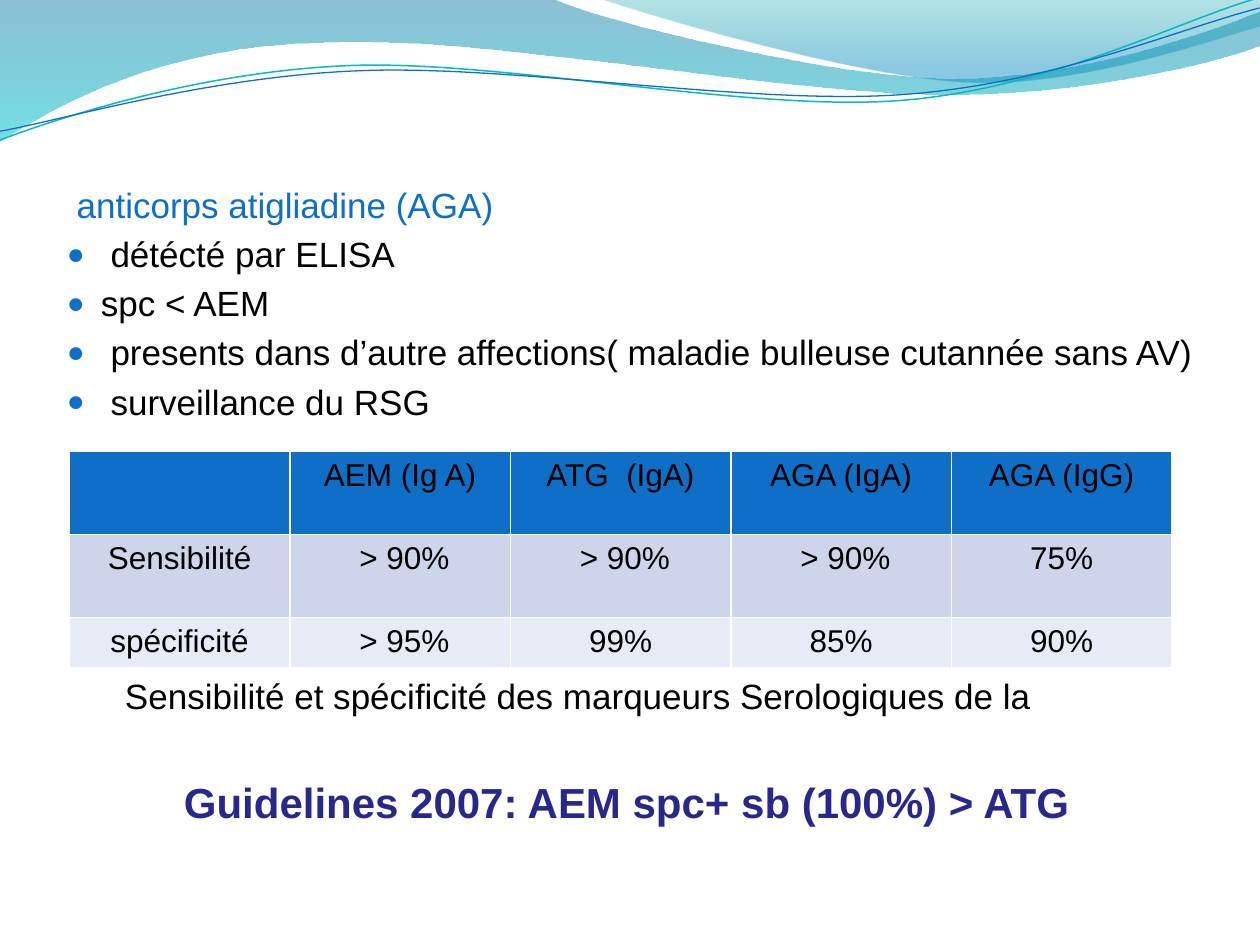
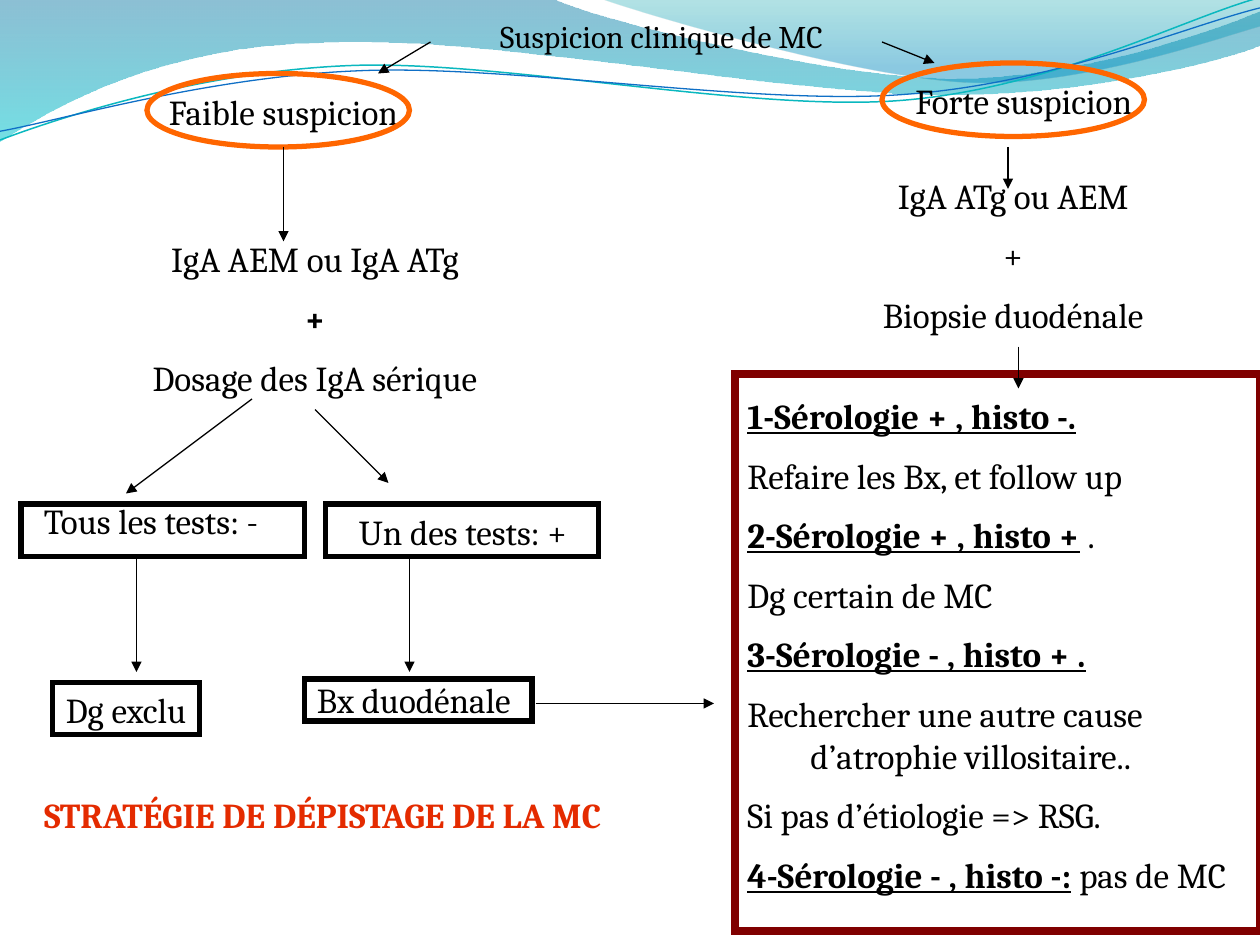
from dataclasses import dataclass
from lxml.etree import SubElement
from pptx import Presentation
from pptx.dml.color import RGBColor as RGB
from pptx.enum.shapes import MSO_CONNECTOR as LINE, MSO_SHAPE as SHAPE
from pptx.enum.text import MSO_ANCHOR as ANCHOR, MSO_AUTO_SIZE as AUTO, PP_ALIGN as ALIGN
from pptx.oxml.ns import qn
from pptx.util import Pt


@dataclass(frozen=True)
class Theme:
    blue: str = "0F6FC6"
    teal: str = "0AB8BF"
    black: str = "000000"
    white: str = "FFFFFF"
    navy: str = "28288C"
    red: str = "E42B00"
    orange: str = "FF6600"
    maroon: str = "800000"
    row_fills: tuple = ("0F6FC6", "CCD5EA", "E7EBF5")
    sans: str = "Arial"
    serif: str = "Cambria"
    small: int = 18
    text: int = 20
    large: int = 24


T = Theme()

# Shared waves: start point, then line ends (2 numbers) or Bézier curves (6)
BANDS = [
    ((0, 0), [(317, 0), (343, 12, 478, 45, 546, 45), (614, 45, 690, 19, 720, 6.5),
              (720, 26), (708, 32, 626, 55, 537, 54), (446, 54, 275, 20, 185, 24.5),
              (93, 26, 33, 60, 0, 81)],
     [(0, "0074A1", 45), (1, "00C6CF", 55)]),
    ((345, 0), [(367, 8, 491, 44.5, 553.5, 47), (616.5, 49.5, 692, 23, 720, 15), (720, 0)],
     [(0, "00A1A9", 30), (0.8, "008BBF", 45)]),
]
STRANDS = [
    ((0, 80), [(34.5, 67, 114, 41, 199.5, 37.5), (284.5, 34, 427, 64, 513.5, 57.5),
               (600, 51, 675.5, 11, 718.5, -1)], T.teal, 0.85),
    ((0, 75), [(34, 69, 118, 44, 204, 40.5), (290, 36.5, 430, 60.5, 516, 54),
               (602, 48, 677.5, 15, 720, 4.5)], T.blue, 0.75),
]

# Slide 1 content
AGA_HEADING = " anticorps atigliadine (AGA)"
AGA_POINTS = [" détécté par ELISA", "spc < AEM",
              " presents dans d’autre affections( maladie bulleuse cutannée sans AV)",
              " surveillance du RSG"]
MARKERS = [
    ["", "AEM (Ig A)", "ATG  (IgA)", "AGA (IgA)", "AGA (IgG)"],
    ["Sensibilité", " > 90%", " > 90%", " > 90%", "75%"],
    ["spécificité", " > 95%", "99%", "85%", "90%"],
]
CAPTION = "Sensibilité et spécificité des marqueurs Serologiques de la"
GUIDELINE = "Guidelines 2007: AEM spc+ sb (100%) > ATG"

# Slide 2 content: a paragraph is a string or a list of (text, style) runs
STRATEGY_TITLE = "STRATÉGIE DE DÉPISTAGE DE LA MC"
KEY = dict(bold=True, underline=True)
LABELS = [  # left, top, width, height, alignment, size, paragraphs
    (204, 6, 348, 36, ALIGN.CENTER, T.small, ["Suspicion clinique de MC"]),
    (516, 42, 186, 31, ALIGN.LEFT, T.text, ["Forte suspicion"]),
    (24, 48, 276, 31, ALIGN.CENTER, T.text, ["Faible suspicion"]),
    (24, 132, 312, 103, ALIGN.CENTER, T.text,
     ["IgA AEM ou IgA ATg", [("+", dict(bold=True))], "Dosage des IgA sérique"]),
    (18, 282, 180, 36, ALIGN.LEFT, T.text, ["Tous les tests: -"]),
    (198, 288, 174, 31, ALIGN.LEFT, T.text, ["Un des tests: +"]),
    (-24, 390, 192, 31, ALIGN.CENTER, T.text, ["Dg exclu"]),
    (174, 384, 156, 31, ALIGN.LEFT, T.text, ["Bx duodénale"]),
    (486, 96, 186, 103, ALIGN.CENTER, T.text, ["IgA ATg ou AEM", "+", "Biopsie duodénale"]),
]
OUTCOMES = [
    [("1-Sérologie + , histo -.", KEY)],
    "Refaire les Bx, et follow up",
    [("2-Sérologie + , histo +", KEY), (" .", {})],
    "Dg certain de MC",
    [("3-Sérologie - , histo + .", KEY)],
    "Rechercher une autre cause d’atrophie villositaire..",
    "Si pas d’étiologie => RSG.",
    [("4-Sérologie - , histo -:", KEY), (" pas de MC", {})],
]
FRAMES = [  # left, top, width, height, preset, colour, line width
    (84, 42, 150, 42, SHAPE.OVAL, T.orange, 3),
    (504, 36, 150, 42, SHAPE.OVAL, T.orange, 3),
    (12, 288, 162, 30, SHAPE.RECTANGLE, T.black, 3),
    (186, 288, 156, 30, SHAPE.RECTANGLE, T.black, 3),
    (30, 390, 84, 30, SHAPE.RECTANGLE, T.black, 3),
    (174, 388, 130, 24, SHAPE.RECTANGLE, T.black, 3),
    (420, 214, 300, 318, SHAPE.RECTANGLE, T.maroon, 4.5),
]
ARROWS = [
    (246, 24, 216, 42), (504, 24, 534, 36),      # suspicion to both branches
    (162, 84, 162, 138), (576, 84, 576, 108),    # branch to first tests
    (144, 228, 72, 282), (180, 234, 222, 276),   # tests to their results
    (78, 318, 78, 384), (234, 318, 234, 384),    # results to decisions
    (582, 198, 582, 222), (306, 402, 408, 402),  # biopsies to outcomes
]


def pts(*values):
    return [Pt(v) for v in values]


def set_bullet(pPr, bullet):
    if not bullet:
        SubElement(pPr, qn("a:buNone"))
        return
    SubElement(SubElement(pPr, qn("a:buClr")), qn("a:srgbClr"), val=T.blue)
    SubElement(pPr, qn("a:buSzPct"), val="85000")
    SubElement(pPr, qn("a:buFont"), typeface=T.sans)
    SubElement(pPr, qn("a:buChar"), char=bullet)


def write(shape, paras, size, font, color=T.black, align=ALIGN.LEFT, gap=0,
          left=0, hang=0, bold=False, bullet=None):
    """Append paragraphs to the text of a shape."""
    tf = shape.text_frame
    tf.word_wrap, tf.auto_size, tf.vertical_anchor = True, AUTO.NONE, ANCHOR.TOP
    for para in paras:
        p = tf.add_paragraph() if tf.text else tf.paragraphs[0]
        p.alignment, p.space_before = align, Pt(gap)
        pPr = p._p.get_or_add_pPr()
        pPr.set("marL", str(Pt(left)))
        pPr.set("indent", str(-Pt(hang)))
        set_bullet(pPr, bullet)
        for text, style in [(para, {})] if isinstance(para, str) else para:
            r = p.add_run()
            r.text = text
            r.font.size, r.font.name = Pt(size), font
            r.font.color.rgb = RGB.from_string(color)
            r.font.bold = style.get("bold", bold)
            r.font.underline = style.get("underline", False)


def place(shape, *box):
    shape.left, shape.top, shape.width, shape.height = pts(*box)
    return shape


def text_box(s, box, paras, *args, **kw):
    write(s.shapes.add_textbox(*pts(*box)), paras, *args, **kw)


def outline(shape, color, width):
    shape.fill.background()
    shape.line.color.rgb = RGB.from_string(color)
    shape.line.width = Pt(width)
    SubElement(shape.element.spPr.find(qn("a:ln")), qn("a:miter"), lim="800000")


def arrow(s, *ends):
    c = s.shapes.add_connector(LINE.STRAIGHT, *pts(*ends))
    c.line.color.rgb = RGB.from_string(T.black)
    c.line.width = Pt(0.75)
    spPr = c.element.spPr
    SubElement(spPr.find(qn("a:ln")), qn("a:tailEnd"), type="triangle")
    SubElement(spPr, qn("a:effectLst"))


def wave(s, start, segments, close):
    """Outline through the segment ends, with the curved segments then bent."""
    fb = s.shapes.build_freeform(*pts(*start), scale=1.0)
    fb.add_line_segments([pts(*seg[-2:]) for seg in segments], close=close)
    shape = fb.convert_to_shape()
    shape.shadow.inherit = False
    sides = list(shape.element.spPr.iter(qn("a:lnTo")))
    for side, seg in zip(sides, segments):
        if len(seg) == 6:
            side.tag = qn("a:cubicBezTo")
            side.remove(side[0])
            for x, y in zip(seg[::2], seg[1::2]):
                SubElement(side, qn("a:pt"), x=str(Pt(x) - shape.left),
                           y=str(Pt(y) - shape.top))
    return shape


def add_waves(prs, s):
    """Draw the waves, then move them to the master so every slide shows them."""
    waves = []
    for start, segments, stops in BANDS:
        band = wave(s, start, segments, True)
        band.line.fill.background()
        band.fill.gradient()
        band.fill.gradient_angle = 270
        for stop, (pos, color, _) in zip(band.fill.gradient_stops, stops):
            stop.position, stop.color.rgb = pos, RGB.from_string(color)
        colors = band.element.spPr.iter(qn("a:srgbClr"))
        for clr, (_, _, opacity) in zip(colors, stops):
            SubElement(clr, qn("a:alpha"), val=str(opacity * 1000))
        waves.append(band)
    for start, segments, color, width in STRANDS:
        strand = wave(s, start, segments, False)
        outline(strand, color, width)
        waves.append(strand)
    for i, shape in enumerate(waves):
        shape.element.nvSpPr.cNvPr.set("id", str(100 + i))
        prs.slide_master.shapes.element.append(shape.element)


def add_markers_table(s):
    heights, col = (47.5, 47.5, 28.5), 126
    box = (39.6, 258, col * len(MARKERS[0]), sum(heights))
    table = s.shapes.add_table(len(MARKERS), len(MARKERS[0]), *pts(*box)).table
    table.first_row = table.horz_banding = False
    for column in table.columns:
        column.width = Pt(col)
    for i, (values, height, fill) in enumerate(zip(MARKERS, heights, T.row_fills)):
        table.rows[i].height = Pt(height)
        for j, value in enumerate(values):
            cell = table.cell(i, j)
            if value:
                p = cell.text_frame.paragraphs[0]
                p.alignment = ALIGN.CENTER
                r = p.add_run()
                r.text = value
                r.font.size, r.font.name = Pt(T.small), T.sans
                r.font.color.rgb = RGB.from_string(T.black)
            tcPr = cell._tc.get_or_add_tcPr()
            for side in ("lnL", "lnR", "lnT", "lnB"):
                ln = SubElement(tcPr, qn(f"a:{side}"), w=str(Pt(1)))
                SubElement(SubElement(ln, qn("a:solidFill")), qn("a:srgbClr"), val=T.white)
            cell.fill.solid()
            cell.fill.fore_color.rgb = RGB.from_string(fill)


def antibody_slide(prs):
    s = prs.slides.add_slide(prs.slide_layouts[1])
    add_waves(prs, s)
    title = s.shapes.title.element
    title.getparent().remove(title)
    # Heading, list, caption and conclusion; the table sits in the caption's gap
    body = place(s.placeholders[1], 0, 101.5, 708.5, 512)
    write(body, [AGA_HEADING], T.text, T.sans, T.blue, left=50.4, hang=19.4)
    write(body, AGA_POINTS, T.text, T.sans, gap=4, left=50.4, hang=19.4, bullet="●")
    write(body, [CAPTION], T.text, T.sans, gap=144.5, left=64.2)
    write(body, [GUIDELINE], T.large, T.sans, T.navy, gap=34, left=97.9, bold=True)
    add_markers_table(s)


def strategy_slide(prs):
    s = prs.slides.add_slide(prs.slide_layouts[5])
    title = place(s.shapes.title, 18, 450, 408, 31)
    write(title, [STRATEGY_TITLE], T.text, T.serif, T.red, bold=True)
    # Labels and outcomes
    for *box, align, size, paras in LABELS:
        text_box(s, box, paras, size, T.serif, align=align, gap=10)
    text_box(s, (420, 222, 312, 310), OUTCOMES, T.text, T.serif, gap=10, left=36, hang=36)
    # Frames
    for *box, preset, color, width in FRAMES:
        frame = s.shapes.add_shape(preset, *pts(*box))
        frame.shadow.inherit = False
        outline(frame, color, width)
    # Arrows
    for ends in ARROWS:
        arrow(s, *ends)


def main():
    prs = Presentation()
    prs.slide_width, prs.slide_height = pts(720, 540)
    antibody_slide(prs)
    strategy_slide(prs)
    prs.save("out.pptx")


if __name__ == "__main__":
    main()
